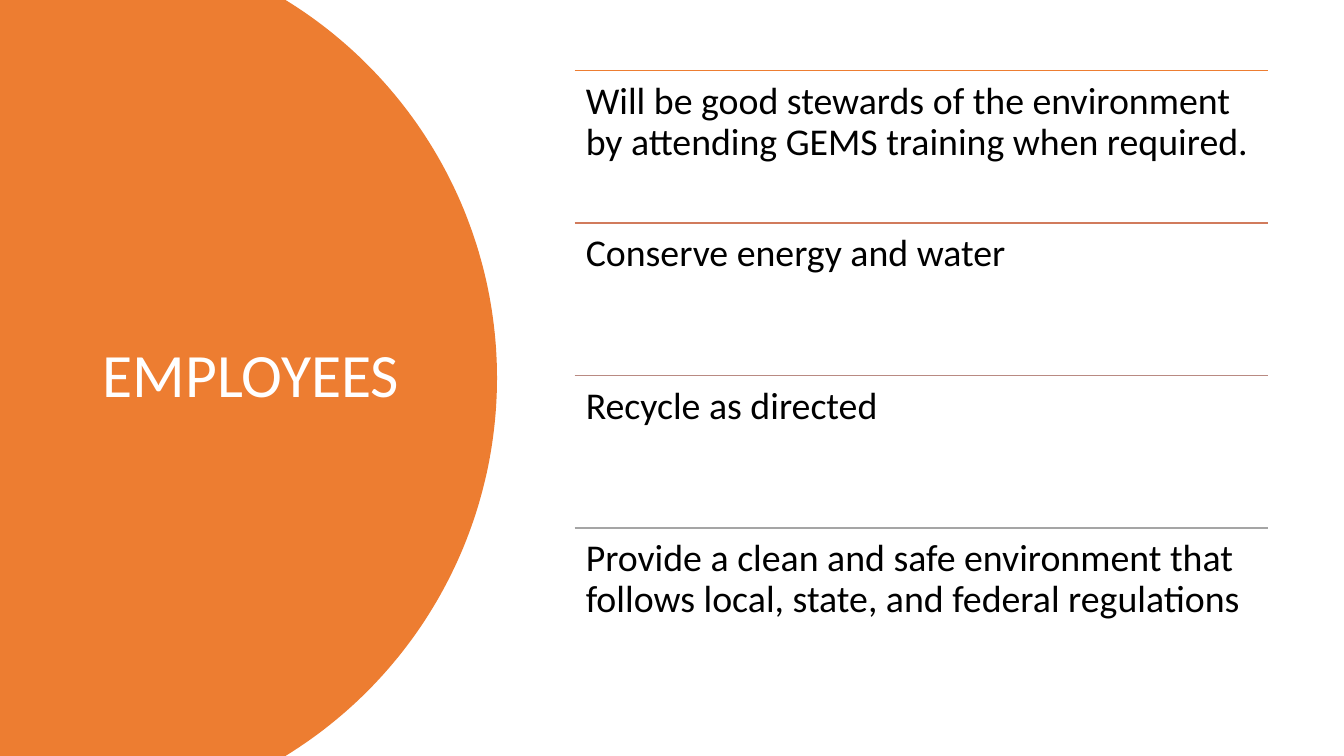
import math

from lxml import etree
from pptx import Presentation
from pptx.dml.color import RGBColor
from pptx.enum import shapes, text
from pptx.oxml.ns import qn
from pptx.util import Inches, Pt

FONT = "Calibri"
ORANGE = RGBColor(0xED, 0x7D, 0x31)
WHITE = RGBColor(0xFF, 0xFF, 0xFF)
BLACK = RGBColor(0x00, 0x00, 0x00)

# Each duty with the colour of the rule above it
DUTIES = [
    ("Will be good stewards of the environment by attending GEMS training when required.", ORANGE),
    ("Conserve energy and water", RGBColor(0xD1, 0x7B, 0x5C)),
    ("Recycle as directed", RGBColor(0xB9, 0x8A, 0x82)),
    ("Provide a clean and safe environment that follows local, state, and federal regulations",
     RGBColor(0xA5, 0xA5, 0xA5)),
]


def write(frame, wording, size, color):
    paragraph = frame.paragraphs[0]
    paragraph.alignment = text.PP_ALIGN.LEFT
    paragraph.line_spacing = 0.9
    run = paragraph.add_run()
    run.text = wording
    run.font.name = FONT
    run.font.size = Pt(size)
    run.font.color.rgb = color


def add_title_panel(slide, left, top, width, height, radius=4.4, steps=120):
    """Panel whose right side is a circular arc, with the title over it."""
    center_x, center_y = left + width - radius, top + height / 2
    half_angle = math.asin(height / 2 / radius)
    angles = [half_angle * (2 * i / steps - 1) for i in range(steps + 1)]
    arc = [(Inches(center_x + radius * math.cos(a)),
            Inches(center_y + radius * math.sin(a))) for a in angles]
    outline = slide.shapes.build_freeform(Inches(left), Inches(top), scale=1.0)
    outline.add_line_segments(arc + [(Inches(left), Inches(top + height))], close=True)
    panel = outline.convert_to_shape()
    panel.shadow.inherit = False
    panel.fill.solid()
    panel.fill.fore_color.rgb = ORANGE
    panel.line.fill.background()

    # Title, kept in front of the panel
    title = slide.shapes.title
    title.element.addprevious(panel.element)
    title.left, title.top = Inches(left + 0.92), Inches(top + 0.7)
    title.width, title.height = Inches(3.23), Inches(6.09)
    frame = title.text_frame
    frame.word_wrap = True
    frame.auto_size = text.MSO_AUTO_SIZE.NONE
    frame.vertical_anchor = text.MSO_ANCHOR.MIDDLE
    write(frame, "EMPLOYEES", 44, WHITE)


def add_duty_list(slide, left, top, width, height):
    """Equal rows, each a rule with a duty below it."""
    duty_list = slide.shapes.add_group_shape().shapes
    row_height = height / len(DUTIES)
    for i, (duty, color) in enumerate(DUTIES):
        row_top = Inches(top + i * row_height)
        rule = duty_list.add_connector(shapes.MSO_CONNECTOR.STRAIGHT, Inches(left), row_top,
                                       Inches(left + width), row_top)
        rule.line.color.rgb = color
        rule.line.width = Pt(1)
        etree.SubElement(rule.element.spPr, qn("a:effectLst"))

        row = duty_list.add_textbox(Inches(left), row_top, Inches(width), Inches(row_height))
        frame = row.text_frame
        frame.word_wrap = True
        frame.margin_left = frame.margin_right = Inches(0.11)
        frame.margin_top = frame.margin_bottom = Inches(0.11)
        write(frame, duty, 27, BLACK)


def main():
    deck = Presentation()
    deck.slide_width, deck.slide_height = Inches(13.33), Inches(7.5)
    slide = deck.slides.add_slide(deck.slide_layouts[5])
    add_title_panel(slide, 0, 0, 4.93, 7.5)
    add_duty_list(slide, 5.7, 0.7, 6.88, 6.05)
    deck.save("out.pptx")


if __name__ == "__main__":
    main()
